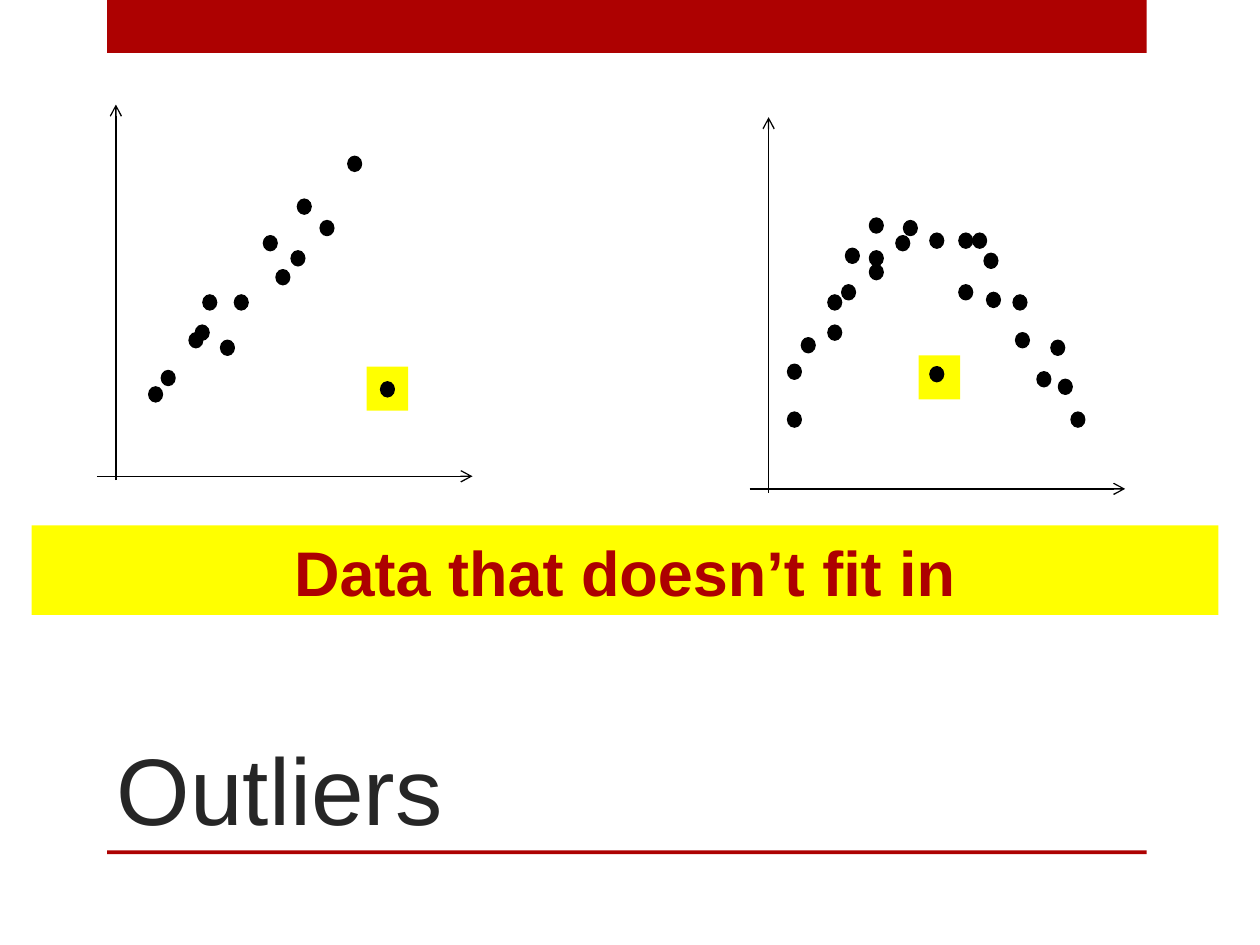
import dataclasses

import pptx
import pptx.dml.color
import pptx.enum.shapes
import pptx.enum.text
import pptx.oxml
import pptx.oxml.ns
import pptx.util

Inches = pptx.util.Inches
Shape = pptx.enum.shapes.MSO_SHAPE
Align = pptx.enum.text.PP_ALIGN
Anchor = pptx.enum.text.MSO_ANCHOR

RED, YELLOW, BLACK, GREY = "AD0101", "FFFF00", "000000", "262626"
AXIS = 2.98  # length of each axis
DOT_W, DOT_H = 0.11, 0.12


@dataclasses.dataclass
class Plot:
    left: float  # x of the vertical axis
    top: float  # y of its arrowhead
    dots: list[tuple[float, float]]
    odd: tuple[float, float]  # the outlier
    mark: tuple[float, float]  # corner of its highlight


@dataclasses.dataclass
class Label:
    text: str
    box: tuple[float, float, float, float]
    size: int
    color: str
    bold: bool
    align: Align


PLOTS = [
    Plot(0.92, 0.83, [
        (1.18, 3.07), (1.28, 2.94), (1.5, 2.64), (1.55, 2.58), (1.61, 2.34),
        (1.75, 2.7), (1.86, 2.34), (2.09, 1.87), (2.19, 2.14), (2.31, 1.99),
        (2.36, 1.58), (2.54, 1.75), (2.76, 1.24),
    ], (3.02, 3.03), (2.91, 2.91)),
    Plot(6.1, 0.93, [
        (6.25, 3.27), (6.25, 2.89), (6.36, 2.68), (6.57, 2.58), (6.57, 2.34),
        (6.68, 2.26), (6.71, 1.97), (6.9, 2.1), (6.9, 1.99), (6.9, 1.73),
        (7.11, 1.87), (7.17, 1.75), (7.38, 1.85), (7.61, 1.85), (7.72, 1.85),
        (7.81, 2.01), (7.61, 2.26), (7.83, 2.32), (8.04, 2.34), (8.06, 2.64),
        (8.34, 2.7), (8.23, 2.95), (8.4, 3.01), (8.5, 3.27),
    ], (7.38, 2.91), (7.29, 2.82)),
]
TITLE = Label("Outliers", (0.83, 5, 7.42, 1.75), 54, GREY, False, Align.LEFT)
BANNER = Label("Data that doesn’t fit in", (0.25, 4.17, 9.42, 0.71),
               36, RED, True, Align.CENTER)


def paint(form, color: str) -> None:
    """Set the colour of a fill, or of a font given as its fill."""
    form.solid()
    form.fore_color.rgb = pptx.dml.color.RGBColor.from_string(color)


def block(slide, kind: Shape, box: tuple, color: str, edge: float = 0):
    shape = slide.shapes.add_shape(kind, *map(Inches, box))
    shape.shadow.inherit = False
    paint(shape.fill, color)
    if edge:
        paint(shape.line.fill, color)
        shape.line.width = pptx.util.Pt(edge)
    else:
        shape.line.fill.background()
    return shape


def write(shape, label: Label) -> None:
    frame = shape.text_frame
    frame.text = label.text
    frame.word_wrap = True
    frame.vertical_anchor = Anchor.BOTTOM
    para = frame.paragraphs[0]
    para.alignment = label.align
    font = para.runs[0].font
    font.name, font.bold = "Arial", label.bold
    font.size = pptx.util.Pt(label.size)
    paint(font.fill, label.color)


def arrow(slide, start: tuple, end: tuple) -> None:
    line = slide.shapes.add_connector(
        pptx.enum.shapes.MSO_CONNECTOR.STRAIGHT,
        *map(Inches, start + end))
    paint(line.line.fill, BLACK)
    line.line.width = pptx.util.Pt(0.75)
    tip = pptx.oxml.parse_xml(
        f'<a:tailEnd {pptx.oxml.ns.nsdecls("a")} type="arrow"/>')
    line.line._get_or_add_ln().append(tip)
    line._element.spPr.append(pptx.oxml.parse_xml(
        f'<a:effectLst {pptx.oxml.ns.nsdecls("a")}/>'))


def draw(slide, plot: Plot) -> None:
    block(slide, Shape.RECTANGLE, plot.mark + (0.33, 0.35), YELLOW)
    low, start = plot.top + 2.95, plot.left - 0.15
    arrow(slide, (plot.left, plot.top + AXIS), (plot.left, plot.top))
    arrow(slide, (start, low), (start + AXIS, low))
    for dot in plot.dots + [plot.odd]:
        block(slide, Shape.OVAL, dot + (DOT_W, DOT_H), BLACK, 0.75)


def main() -> None:
    deck = pptx.Presentation()
    deck.slide_width, deck.slide_height = Inches(10), Inches(7.5)
    slide = deck.slides.add_slide(deck.slide_layouts[6])

    # Red bar on top and rule under the title
    for top, high in ((0, 0.42), (6.75, 0.03)):
        block(slide, Shape.RECTANGLE, (0.85, top, 8.25, high), RED)

    # Title and banner
    write(slide.shapes.add_textbox(*map(Inches, TITLE.box)), TITLE)
    write(block(slide, Shape.RECTANGLE, BANNER.box, YELLOW), BANNER)

    # Scatter plots
    for plot in PLOTS:
        draw(slide, plot)

    deck.save("out.pptx")


if __name__ == "__main__":
    main()
